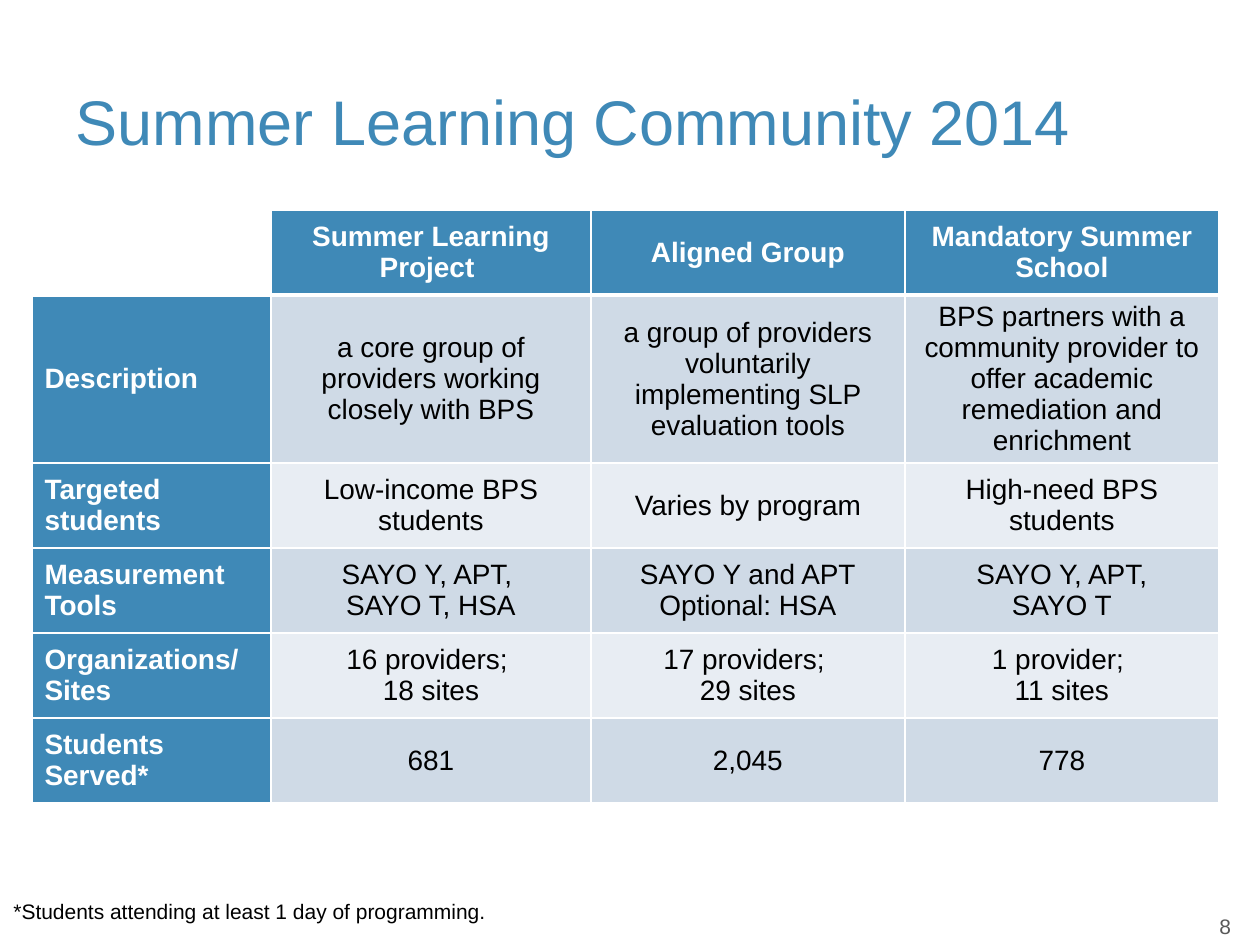
from dataclasses import dataclass

from lxml import etree
from pptx import Presentation, util as u
from pptx.dml.color import RGBColor
from pptx.enum import text
from pptx.oxml import ns


@dataclass(frozen=True)
class Theme:
    font: str = "Arial"
    blue: str = "3F89B7"
    band_dark: str = "CFDAE6"
    band_light: str = "E8EDF3"
    white: str = "FFFFFF"
    black: str = "000000"
    grey: str = "595959"
    title: int = 36
    body: int = 16
    note: int = 12


@dataclass(frozen=True)
class Box:
    x: int
    y: int
    w: int
    h: int


@dataclass(frozen=True)
class Note:
    text: str
    box: Box
    color: str


THEME = Theme()
TABLE_BOX = Box(32, 210, 1187, 592)
TITLE_BOX = Box(63, 42, 1134, 157)
COL_WIDTHS = (239, 320, 314, 314)
ROW_HEIGHTS = (85, 167, 85, 85, 85, 85)
ROWS = (
    ("", "Summer Learning Project ", "Aligned Group", "Mandatory Summer School"),
    ("Description",
     "a core group of providers working closely with BPS",
     "a group of providers voluntarily implementing SLP evaluation tools",
     "BPS partners with a community provider to offer academic remediation and enrichment"),
    ("Targeted students", "Low-income BPS students", "Varies by program",
     "High-need BPS students"),
    ("Measurement Tools", "SAYO Y, APT, \nSAYO T, HSA",
     "SAYO Y and APT\nOptional: HSA", "SAYO Y, APT,\nSAYO T"),
    ("Organizations/ Sites", "16 providers; \n18 sites", "17 providers; \n29 sites",
     "1 provider; \n11 sites"),
    ("Students Served*", "681", "2,045", "778"),
)
NOTES = (
    Note("*Students attending at least 1 day of programming.",
         Box(1, 892, 725, 38), THEME.black),
    Note("8", Box(1207, 907, 53, 38), THEME.grey),
)


def px(n: int) -> u.Emu:
    return u.Emu(round(n * 914400 / 126))


def place(sp, box: Box) -> None:
    sp.left, sp.top, sp.width, sp.height = map(px, (box.x, box.y, box.w, box.h))


def style(tf, size: int, color: str, bold: bool = False, align=text.PP_ALIGN.LEFT) -> None:
    for p in tf.paragraphs:
        p.alignment = align
        for r in p.runs:
            r.font.name = THEME.font
            r.font.size = u.Pt(size)
            r.font.bold = bold
            r.font.color.rgb = RGBColor.from_string(color)


def set_borders(cell, bottom: int) -> None:
    tc_pr = cell._tc.get_or_add_tcPr()
    widths = {"lnL": 1, "lnR": 1, "lnT": 1, "lnB": bottom}
    for i, (tag, width) in enumerate(widths.items()):
        ln = etree.Element(ns.qn(f"a:{tag}"), w=str(u.Pt(width)))
        fill = etree.SubElement(ln, ns.qn("a:solidFill"))
        etree.SubElement(fill, ns.qn("a:srgbClr"), val=THEME.white)
        tc_pr.insert(i, ln)


def cell_fill(row: int, col: int) -> str:
    if row == 0 and col == 0:
        return THEME.white
    if row == 0 or col == 0:
        return THEME.blue
    return THEME.band_dark if row % 2 else THEME.band_light


def add_title(s, title: str) -> None:
    sp = s.shapes.title
    place(sp, TITLE_BOX)
    tf = sp.text_frame
    tf.text = title
    tf.word_wrap = True
    tf.vertical_anchor = text.MSO_ANCHOR.MIDDLE
    style(tf, THEME.title, THEME.blue)


def add_program_table(s) -> None:
    b = TABLE_BOX
    table = s.shapes.add_table(len(ROWS), len(COL_WIDTHS),
                               px(b.x), px(b.y), px(b.w), px(b.h)).table
    table.first_col = True
    for column, width in zip(table.columns, COL_WIDTHS):
        column.width = px(width)
    for row, height in zip(table.rows, ROW_HEIGHTS):
        row.height = px(height)
    for i, row in enumerate(ROWS):
        for j, value in enumerate(row):
            cell = table.cell(i, j)
            cell.text_frame.text = value
            cell.vertical_anchor = text.MSO_ANCHOR.MIDDLE
            cell.fill.solid()
            cell.fill.fore_color.rgb = RGBColor.from_string(cell_fill(i, j))
            heading = i == 0 or j == 0
            style(cell.text_frame, THEME.body,
                  THEME.white if heading else THEME.black, heading,
                  text.PP_ALIGN.CENTER if j else text.PP_ALIGN.LEFT)
            set_borders(cell, 1 if i else 3)


def add_note(s, note: Note) -> None:
    b = note.box
    tf = s.shapes.add_textbox(px(b.x), px(b.y), px(b.w), px(b.h)).text_frame
    tf.word_wrap = True
    tf.auto_size = text.MSO_AUTO_SIZE.SHAPE_TO_FIT_TEXT
    tf.text = note.text
    style(tf, THEME.note, note.color)


def main() -> None:
    prs = Presentation()
    prs.slide_width, prs.slide_height = px(1260), px(945)
    s = prs.slides.add_slide(prs.slide_layouts[5])
    add_title(s, "Summer Learning Community 2014")
    add_program_table(s)
    for note in NOTES:
        add_note(s, note)
    prs.save("out.pptx")


if __name__ == "__main__":
    main()
